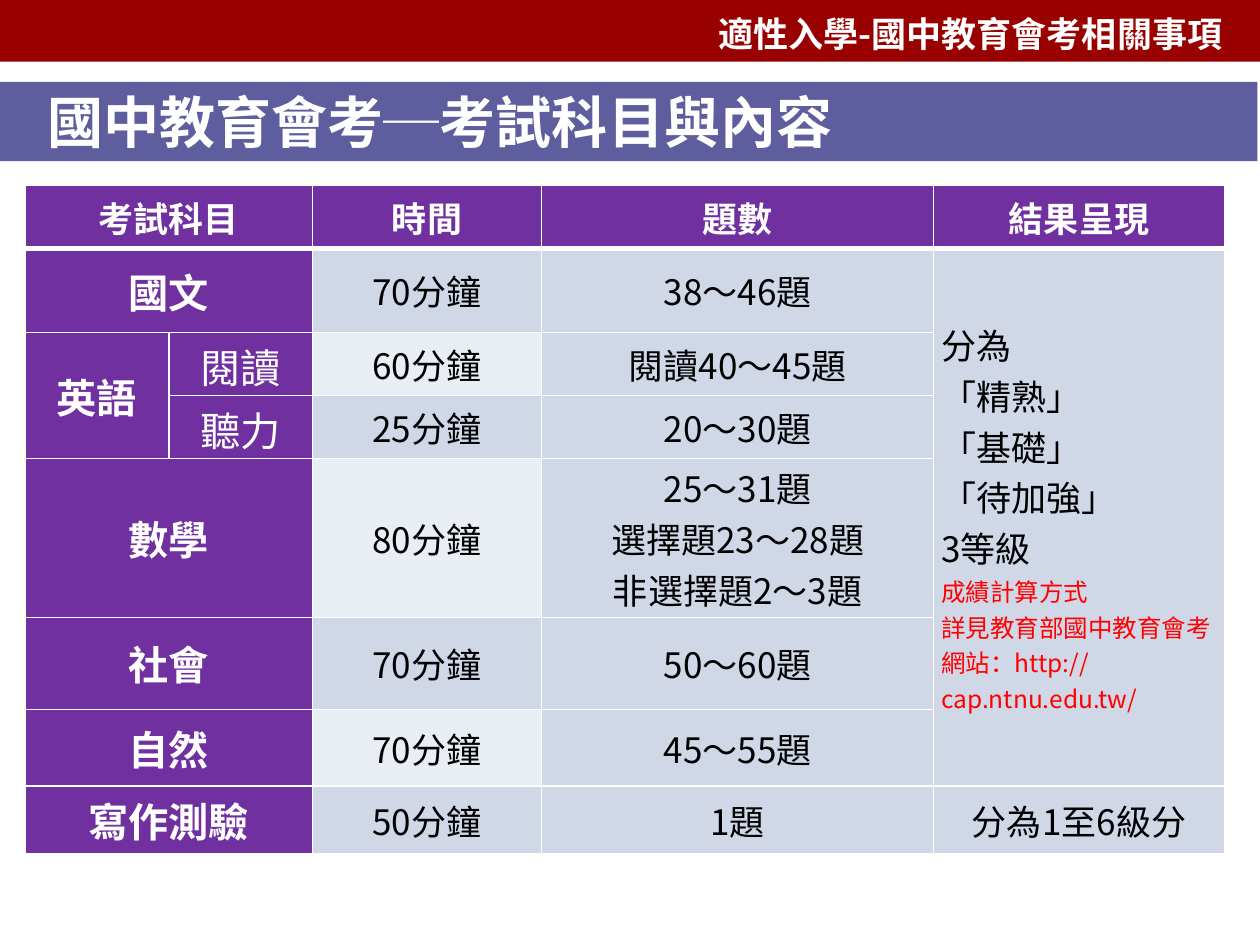
from dataclasses import dataclass
from itertools import product

from lxml.etree import SubElement
from pptx import Presentation
from pptx.dml.color import RGBColor
from pptx.enum.shapes import MSO_SHAPE
from pptx.enum.text import MSO_ANCHOR, PP_ALIGN
from pptx.oxml.ns import qn
from pptx.util import Inches, Pt

FONT = "Noto Sans CJK SC"
COLORS = {
    "white": "FFFFFF", "black": "000000", "red": "FF0000", "banner": "990000",
    "title": "000066", "purple": "7030A0", "blue": "D0D8E8", "pale": "E9EDF4",
}
COLUMN_WIDTHS = [1.14, 1.14, 1.82, 3.11, 2.31]
ROW_HEIGHTS = [0.5, 0.67, 0.5, 0.5, 1.26, 0.73, 0.61, 0.54]
QUESTIONS_COLUMN = 3


@dataclass
class Entry:
    row: int
    column: int
    lines: list[str]
    rows: int = 1
    columns: int = 1


HEADINGS = [
    Entry(0, 0, ["考試科目"], columns=2),
    Entry(0, 2, ["時間"]),
    Entry(0, 3, ["題數"]),
    Entry(0, 4, ["結果呈現"]),
]
SUBJECTS = [
    Entry(1, 0, ["國文"], columns=2),
    Entry(2, 0, ["英語"], rows=2),
    Entry(4, 0, ["數學"], columns=2),
    Entry(5, 0, ["社會"], columns=2),
    Entry(6, 0, ["自然"], columns=2),
    Entry(7, 0, ["寫作測驗"], columns=2),
]
ENGLISH_PARTS = [Entry(2, 1, ["閱讀"]), Entry(3, 1, ["聽力"])]
MINUTES = [70, 60, 25, 80, 70, 70, 50]
QUESTIONS = [
    ["38～46題"], ["閱讀40～45題"], ["20～30題"],
    ["25～31題", "選擇題23～28題", "非選擇題2～3題"],
    ["50～60題"], ["45～55題"], ["1題"],
]
DETAILS = [Entry(row, 2, [f"{time}分鐘"]) for row, time in enumerate(MINUTES, 1)]
DETAILS += [Entry(row, 3, lines) for row, lines in enumerate(QUESTIONS, 1)]
DETAILS.append(Entry(7, 4, ["分為1至6級分"]))
LEVELS = Entry(1, 4, ["分為", "「精熟」", "「基礎」", "「待加強」", "3等級"], rows=6)
SCORING_NOTE = ["成績計算方式", "詳見教育部國中教育會考網站：http://cap.ntnu.edu.tw/"]


def rgb(name: str) -> RGBColor:
    return RGBColor.from_string(COLORS[name])


def write(frame, lines: list[str], *, size: float, color: str = "white",
          bold: bool = False, align=PP_ALIGN.LEFT, append: bool = False) -> None:
    for index, line in enumerate(lines):
        first = index == 0 and not append
        paragraph = frame.paragraphs[0] if first else frame.add_paragraph()
        paragraph.alignment = align
        run = paragraph.add_run()
        run.text = line
        run.font.name = FONT
        run.font.size = Pt(size)
        run.font.bold = bold
        run.font.color.rgb = rgb(color)
        SubElement(run.font._element, qn("a:ea"), typeface=FONT)


def add_bar(slide, left: float, top: float, width: float, height: float,
            color: str, opacity: int = 100):
    bar = slide.shapes.add_shape(MSO_SHAPE.RECTANGLE, Inches(left), Inches(top),
                                 Inches(width), Inches(height))
    bar.shadow.inherit = False
    bar.fill.solid()
    bar.fill.fore_color.rgb = rgb(color)
    bar.line.fill.background()
    if opacity < 100:
        tint = bar.fill._xPr.find(".//" + qn("a:srgbClr"))
        SubElement(tint, qn("a:alpha"), val=str(opacity * 1000))
    return bar


def add_border(cell, side: str, width: float) -> None:
    line = SubElement(cell._tc.get_or_add_tcPr(), qn(f"a:ln{side}"), w=str(Pt(width)))
    fill = SubElement(line, qn("a:solidFill"))
    SubElement(fill, qn("a:srgbClr"), val=COLORS["white"])


def cell_color(row: int, column: int) -> str:
    if row == 0 or column < 2:
        return "purple"
    return "pale" if column == 2 and row in (2, 4, 6) else "blue"


def style_cell(cell, row: int, column: int) -> None:
    for side in "LRTB":
        heading_edge = (row, side) in ((0, "B"), (1, "T"))
        add_border(cell, side, 3 if heading_edge else 1)
    cell.fill.solid()
    cell.fill.fore_color.rgb = rgb(cell_color(row, column))
    cell.vertical_anchor = MSO_ANCHOR.MIDDLE
    tight = column == QUESTIONS_COLUMN
    cell.margin_left = cell.margin_right = Inches(0 if tight else 0.06)
    cell.margin_top = cell.margin_bottom = Inches(0 if tight else 0.03)


def fill_entry(table, entry: Entry, **text_format):
    cell = table.cell(entry.row, entry.column)
    if entry.rows > 1 or entry.columns > 1:
        cell.merge(table.cell(entry.row + entry.rows - 1,
                              entry.column + entry.columns - 1))
    write(cell.text_frame, entry.lines, **text_format)
    return cell


def add_exam_table(slide) -> None:
    table = slide.shapes.add_table(
        len(ROW_HEIGHTS), len(COLUMN_WIDTHS), Inches(0.2), Inches(1.47),
        Inches(sum(COLUMN_WIDTHS)), Inches(sum(ROW_HEIGHTS))).table
    for column, width in zip(table.columns, COLUMN_WIDTHS):
        column.width = Inches(width)
    for row, height in zip(table.rows, ROW_HEIGHTS):
        row.height = Inches(height)
    for row, column in product(range(len(ROW_HEIGHTS)), range(len(COLUMN_WIDTHS))):
        style_cell(table.cell(row, column), row, column)

    groups = [
        (HEADINGS, 20, "white", True),
        (SUBJECTS, 23, "white", True),
        (ENGLISH_PARTS, 23, "white", False),
        (DETAILS, 20, "black", False),
    ]
    for entries, size, color, bold in groups:
        for entry in entries:
            fill_entry(table, entry, size=size, color=color, bold=bold,
                       align=PP_ALIGN.CENTER)
    levels = fill_entry(table, LEVELS, size=20, color="black")
    write(levels.text_frame, SCORING_NOTE, size=14, color="red", append=True)


def main() -> None:
    presentation = Presentation()
    presentation.slide_width = Inches(10)
    presentation.slide_height = Inches(7.5)
    slide = presentation.slides.add_slide(presentation.slide_layouts[6])

    add_bar(slide, 0, 0, 10, 0.49, "banner")
    topic = slide.shapes.add_textbox(Inches(5.37), Inches(0.05),
                                     Inches(4.43), Inches(0.44)).text_frame
    topic.word_wrap = True
    write(topic, ["適性入學-國中教育會考相關事項"], size=20, bold=True,
          align=PP_ALIGN.RIGHT)

    title = add_bar(slide, -0.02, 0.65, 10, 0.63, "title", opacity=63).text_frame
    title.margin_left = Inches(0.4)
    title.vertical_anchor = MSO_ANCHOR.MIDDLE
    write(title, ["國中教育會考─考試科目與內容"], size=32, bold=True)

    add_exam_table(slide)
    presentation.save("out.pptx")


if __name__ == "__main__":
    main()
